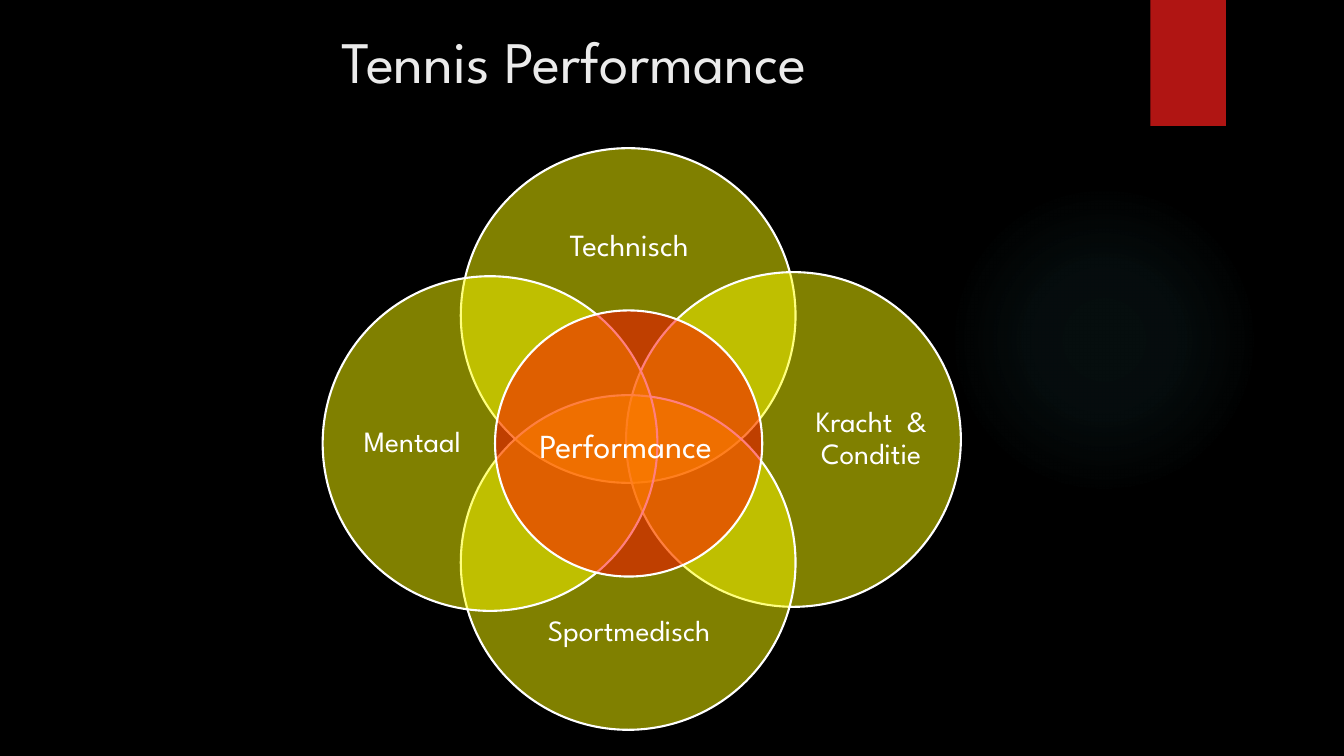
from dataclasses import dataclass

import lxml.etree
import pptx
import pptx.dml.color
import pptx.enum.shapes
import pptx.enum.text
import pptx.oxml
import pptx.oxml.ns
import pptx.util
from pptx.util import Inches

RGB = pptx.dml.color.RGBColor.from_string
ALIGN = pptx.enum.text.PP_ALIGN
SHAPES = pptx.enum.shapes.MSO_SHAPE


@dataclass(frozen=True)
class Theme:
    font: str = "League Spartan"
    background: str = "000000"
    ribbon: str = "B01513"
    glow: str = "50B9C1"
    factor: str = "FFFF00"
    core: str = "FF0000"
    white: str = "FFFFFF"
    title: str = "EBEBEB"
    title_size: int = 42
    top_size: int = 22
    label_size: int = 21
    core_size: int = 24
    outline: float = 1.5
    opacity: int = 50


@dataclass(frozen=True)
class Box:
    left: float
    top: float
    width: float
    height: float

    def emu(self) -> tuple:
        return tuple(Inches(v) for v in (self.left, self.top, self.width, self.height))


@dataclass(frozen=True)
class Circle:
    label: str
    area: Box
    label_area: Box
    color: str
    size: int


THEME = Theme()
FACTOR = 3.32  # diameter of the four outer circles


def factor(label: str, left: float, top: float, label_area: Box,
           size: int = THEME.label_size) -> Circle:
    return Circle(label, Box(left, top, FACTOR, FACTOR), label_area, THEME.factor, size)


CIRCLES = [
    factor("Technisch", 4.57, 1.47, Box(4.96, 1.92, 2.56, 1.05), THEME.top_size),
    factor("Kracht  & Conditie", 6.21, 2.7, Box(8, 3.08, 1.28, 2.55)),
    factor("Sportmedisch", 4.57, 3.92, Box(4.96, 5.74, 2.56, 1.05)),
    factor("Mentaal", 3.2, 2.74, Box(3.45, 3.12, 1.28, 2.55)),
    Circle("Performance", Box(4.91, 3.08, 2.65, 2.64), Box(5.06, 3.43, 2.29, 2.03),
           THEME.core, THEME.core_size),
]


def add_filled(slide, kind, area: Box, color: str):
    """Add a preset shape with a solid fill, no line and no shadow."""
    shape = slide.shapes.add_shape(kind, *area.emu())
    shape.shadow.inherit = False
    shape.fill.solid()
    shape.fill.fore_color.rgb = RGB(color)
    shape.line.fill.background()
    return shape


def set_opacity(color_element, percent: int) -> None:
    alpha = lxml.etree.SubElement(color_element, pptx.oxml.ns.qn("a:alpha"))
    alpha.set("val", str(percent * 1000))


def add_glow(slide) -> None:
    """Add the faint radial light at the right."""
    glow = add_filled(slide, SHAPES.OVAL, Box(9.41, 1.83, 3.08, 3.08), THEME.glow)
    stops = "".join(
        f'<a:gs pos="{position * 1000}"><a:srgbClr val="{THEME.glow}">'
        f'<a:alpha val="{opacity * 1000}"/></a:srgbClr></a:gs>'
        for position, opacity in ((0, 7), (36, 6), (69, 0)))
    gradient = pptx.oxml.parse_xml(
        f'<a:gradFill {pptx.oxml.ns.nsdecls("a")}><a:gsLst>{stops}</a:gsLst>'
        '<a:path path="circle"><a:fillToRect l="50000" t="50000" r="50000" b="50000"/>'
        '</a:path></a:gradFill>')
    properties = glow.element.spPr
    properties.replace(properties.find(pptx.oxml.ns.qn("a:solidFill")), gradient)


def set_font(paragraph, size: int, color: str) -> None:
    paragraph.font.name = THEME.font
    paragraph.font.size = pptx.util.Pt(size)
    paragraph.font.color.rgb = RGB(color)


def add_title(slide, text: str) -> None:
    title = slide.shapes.title
    title.left, title.top, title.width, title.height = Box(2, 0.18, 9.33, 0.83).emu()
    frame = title.text_frame
    frame.text = text
    frame.auto_size = pptx.enum.text.MSO_AUTO_SIZE.NONE
    frame.vertical_anchor = pptx.enum.text.MSO_ANCHOR.MIDDLE
    frame.margin_left = Inches(1.39)
    frame.paragraphs[0].alignment = ALIGN.LEFT
    set_font(frame.paragraphs[0], THEME.title_size, THEME.title)


def add_circle(slide, circle: Circle) -> None:
    """Add a translucent circle and its label."""
    disc = add_filled(slide, SHAPES.OVAL, circle.area, circle.color)
    set_opacity(disc.element.spPr.find(".//" + pptx.oxml.ns.qn("a:srgbClr")), THEME.opacity)
    disc.line.color.rgb = RGB(THEME.white)
    disc.line.width = pptx.util.Pt(THEME.outline)

    frame = slide.shapes.add_textbox(*circle.label_area.emu()).text_frame
    frame.word_wrap = True
    frame.vertical_anchor = pptx.enum.text.MSO_ANCHOR.MIDDLE
    frame.margin_left = frame.margin_right = frame.margin_top = frame.margin_bottom = 0
    frame.text = circle.label
    paragraph = frame.paragraphs[0]
    paragraph.alignment = ALIGN.CENTER
    paragraph.line_spacing = 0.9
    set_font(paragraph, circle.size, THEME.white)


def main() -> None:
    deck = pptx.Presentation()
    deck.slide_width, deck.slide_height = Inches(13.33), Inches(7.5)
    slide = deck.slides.add_slide(deck.slide_layouts.get_by_name("Title Only"))
    slide.background.fill.solid()
    slide.background.fill.fore_color.rgb = RGB(THEME.background)

    add_glow(slide)
    add_filled(slide, SHAPES.RECTANGLE, Box(11.41, 0, 0.75, 1.25), THEME.ribbon)
    add_title(slide, "Tennis Performance")
    for circle in CIRCLES:
        add_circle(slide, circle)
    deck.save("out.pptx")


if __name__ == "__main__":
    main()
